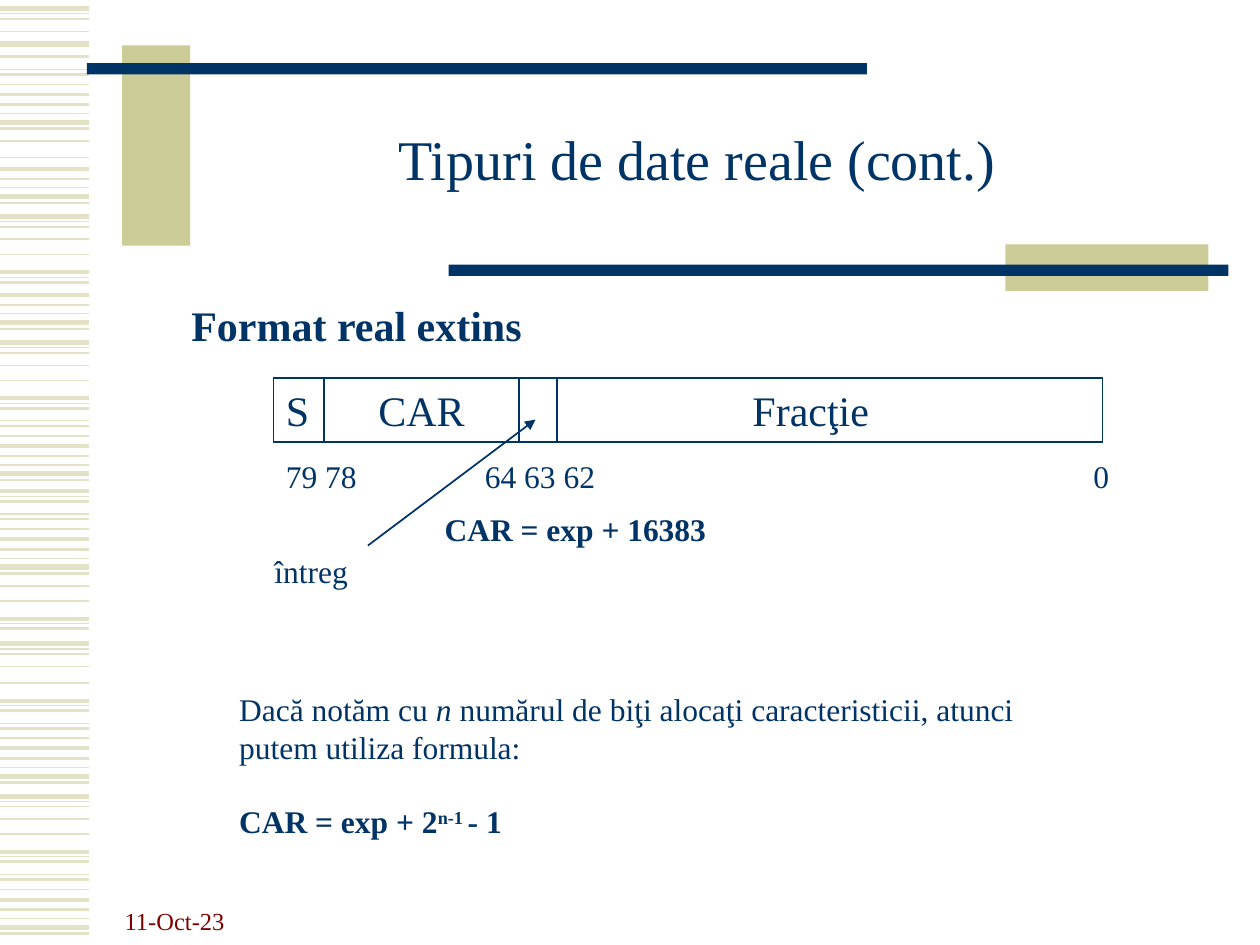
import pptx
import pptx.util
import pptx.dml.color
import pptx.enum.shapes
import pptx.enum.text
import pptx.oxml.ns
from lxml import etree

Pt = pptx.util.Pt
RECT = pptx.enum.shapes.MSO_SHAPE.RECTANGLE
LINE = pptx.enum.shapes.MSO_CONNECTOR.STRAIGHT
ALIGN = pptx.enum.text.PP_ALIGN
ANCHOR = pptx.enum.text.MSO_ANCHOR

THEME = {
    "font": "Times New Roman",
    "navy": "003366", "sand": "CCCC99", "stripe": "E3E2C7", "date": "800000",
    "title": 32, "head": 24, "body": 18, "small": 14,
}

# All places below are in inches.
# Stripe motifs: (offset from the motif's top, weight in points)
MOTIFS = {
    "head": [(0, 3), (0.04, 0.75), (0.08, 1), (0.18, 1)],
    "body": [(0, 2.25), (0.04, 0.75), (0.08, 1.5)],
    "mid": [(0, 0.75), (0.04, 1.5), (0.12, 1)],
    "tail": [(0, 2.25), (0.08, 1.5), (0.15, 0.75), (0.22, 3), (0.27, 1.5)],
    "thin": [(0, 1)],
    "plain": [(0, 1.5)],
    "thick": [(0, 3)],
}
STARTS = {
    "head": [0.07, 1.72, 2.72, 5.11, 6.32],
    "body": [2.16, 3.16, 3.9, 4.91, 5.56, 6.76],
    "mid": [0.55, 3.34, 4.08, 5.74, 6.94],
    "tail": [0.75, 1.34, 2.34, 3.54, 4.28, 5.94, 7.14],
    "thin": [1.12, 1.25, 2.02, 3.02, 4.65, 4.77, 5.42, 6.62],
    "plain": [0.45],
    "thick": [0.35],
}
STRIPE_END = 0.71

BARS = [
    ((0.97, 0.36, 0.54, 1.59), "sand"),
    ((0.69, 0.5, 6.19, 0.09), "navy"),
    ((7.98, 1.94, 1.61, 0.37), "sand"),
    ((3.56, 2.1, 6.19, 0.09), "navy"),
]

TITLE = "Tipuri de date reale (cont.)"
DATE = "11-Oct-23"

# Fields of the number format: name, width, alignment
FIELDS = [
    ("S", 0.4, ALIGN.LEFT),
    ("CAR", 1.55, ALIGN.CENTER),
    ("Fracţie", 4.63, ALIGN.CENTER),
]
FIELD_LEFT, FIELD_TOP, FIELD_HIGH = 2.17, 3, 0.51

# Labels: text, box, size, bold, wrap
LABELS = [
    ("Format real extins", (1.42, 2.33, 2.83, 0.5), "head", True, False),
    ("79 78", (2.17, 3.58, 1, 0.4), "body", False, True),
    ("64 63 62", (3.75, 3.58, 1.25, 0.4), "body", False, True),
    ("0", (8.58, 3.58, 1, 0.4), "body", False, True),
    ("CAR = exp + 16383", (3.43, 4, 2.28, 0.4), "body", True, False),
    ("întreg", (2.08, 4.33, 0.83, 0.4), "body", False, True),
]

# Note paragraphs, each a list of (text, style)
NOTE = [
    [("Dacă notăm cu ", ""), ("n ", "italic"),
     ("numărul de biţi alocaţi caracteristicii, atunci putem utiliza formula:", "")],
    [("CAR = exp + 2", "bold"), ("n-1 ", "bold super"), ("- 1", "bold")],
]
NOTE_BOX = (1.8, 5.43, 6.87, 1.3)
NOTE_GAP = 20.7


def inch(size):
    return pptx.util.Cm(size * 2.54)


def place(box):
    return [inch(size) for size in box]


def tint(name):
    return pptx.dml.color.RGBColor.from_string(THEME[name])


def style(run, size, color="navy", bold=False):
    font = run.font
    font.name, font.size, font.bold = THEME["font"], Pt(THEME[size]), bold
    font.color.rgb = tint(color)


def add_line(slide, start, end, color, weight, arrow=False):
    line = slide.shapes.add_connector(LINE, *place(start + end))
    line.line.color.rgb = tint(color)
    line.line.width = Pt(weight)
    props = line._element.spPr
    if arrow:
        tip = etree.SubElement(line.line._get_or_add_ln(), pptx.oxml.ns.qn("a:tailEnd"))
        tip.set("type", "triangle")
    etree.SubElement(props, pptx.oxml.ns.qn("a:effectLst"))


def add_rect(slide, box):
    rect = slide.shapes.add_shape(RECT, *place(box))
    rect.shadow.inherit = False
    return rect


def add_text(slide, text, box, size, color="navy", bold=False, wrap=True):
    frame = slide.shapes.add_textbox(*place(box)).text_frame
    frame.word_wrap = wrap
    frame.text = text
    style(frame.paragraphs[0].runs[0], size, color, bold)
    return frame


def add_decor(slide):
    for name, tops in STARTS.items():
        for top in tops:
            for shift, weight in MOTIFS[name]:
                y = top + shift
                add_line(slide, (0, y), (STRIPE_END, y), "stripe", weight)
    for box, color in BARS:
        bar = add_rect(slide, box)
        bar.fill.solid()
        bar.fill.fore_color.rgb = tint(color)
        bar.line.fill.background()


def add_title(slide):
    title = slide.shapes.title
    title.left, title.top, title.width, title.height = place((1.5, 0.67, 8.07, 1.25))
    frame = title.text_frame
    frame.text = TITLE
    frame.vertical_anchor = ANCHOR.MIDDLE
    para = frame.paragraphs[0]
    para.alignment, para.line_spacing = ALIGN.CENTER, 0.85
    style(para.runs[0], "title")


def add_fields(slide):
    left = FIELD_LEFT
    for name, width, align in FIELDS:
        rect = add_rect(slide, (left, FIELD_TOP, width, FIELD_HIGH))
        rect.fill.background()
        rect.line.color.rgb = tint("navy")
        rect.line.width = Pt(1)
        frame = rect.text_frame
        frame.text = name
        frame.vertical_anchor = ANCHOR.TOP
        frame.paragraphs[0].alignment = align
        style(frame.paragraphs[0].runs[0], "head")
        left += width
    add_line(slide, (4.42, 3), (4.42, 3.5), "navy", 1)
    add_line(slide, (2.92, 4.33), (4.25, 3.33), "navy", 1, arrow=True)


def add_note(slide):
    frame = slide.shapes.add_textbox(*place(NOTE_BOX)).text_frame
    frame.word_wrap = True
    for i, parts in enumerate(NOTE):
        para = frame.add_paragraph() if i else frame.paragraphs[0]
        para.space_before = Pt(NOTE_GAP if i else 0)
        for text, look in parts:
            run = para.add_run()
            run.text = text
            style(run, "body", bold="bold" in look)
            run.font.italic = "italic" in look
            if "super" in look:
                run.font._element.set("baseline", "30000")


def main():
    deck = pptx.Presentation()
    deck.slide_width, deck.slide_height = place((10, 7.5))
    slide = deck.slides.add_slide(deck.slide_layouts[5])
    add_decor(slide)
    date = add_text(slide, DATE, (0.89, 6.97, 2.08, 0.5), "small", "date")
    date.vertical_anchor = ANCHOR.BOTTOM
    add_title(slide)
    add_fields(slide)
    for text, box, size, bold, wrap in LABELS:
        add_text(slide, text, box, size, bold=bold, wrap=wrap)
    add_note(slide)
    deck.save("out.pptx")


if __name__ == "__main__":
    main()
